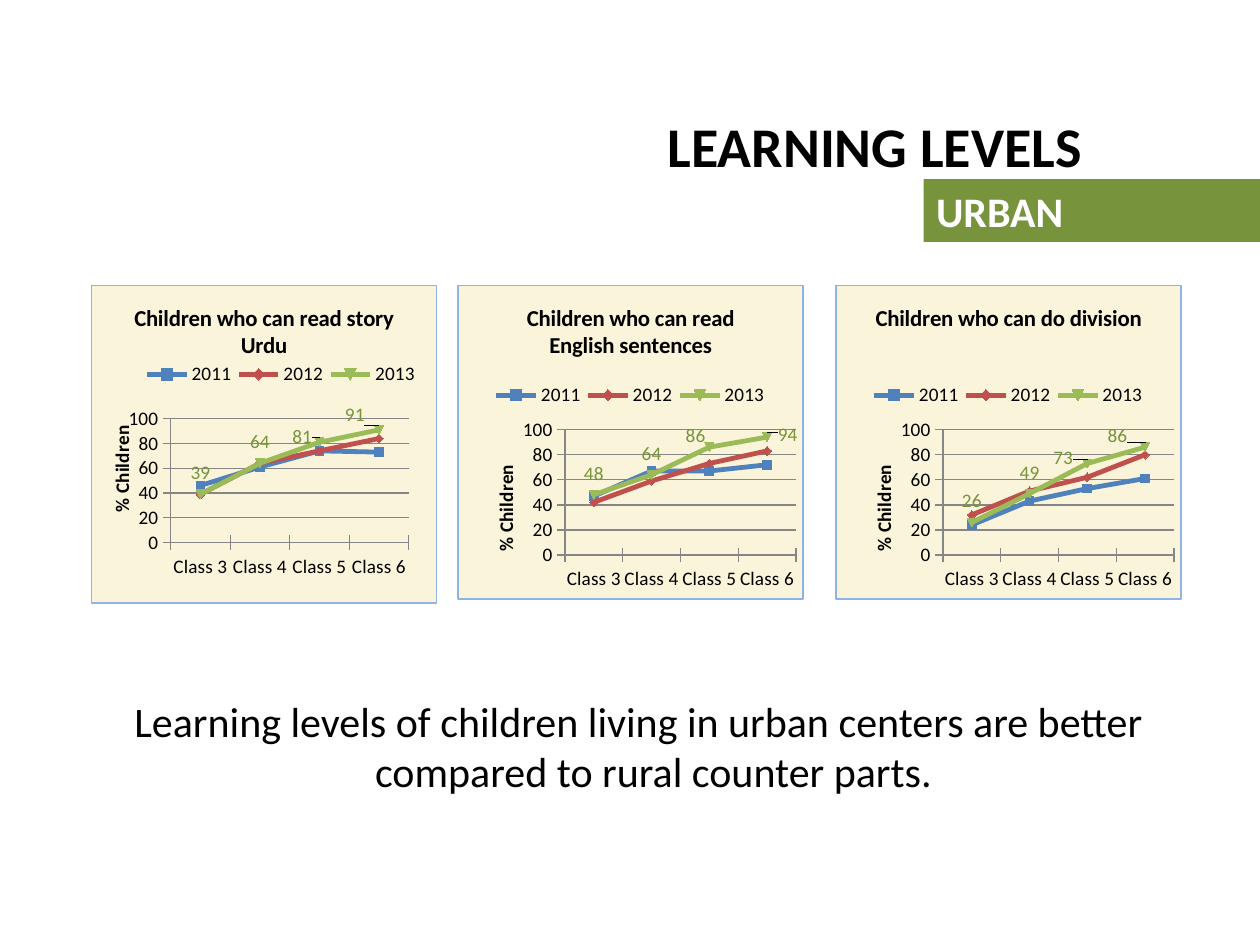
from dataclasses import dataclass

from pptx import Presentation
from pptx.chart.data import CategoryChartData
from pptx.dml.color import RGBColor
from pptx.enum.chart import XL_CHART_TYPE, XL_LABEL_POSITION, XL_LEGEND_POSITION, XL_TICK_MARK
from pptx.enum.shapes import MSO_SHAPE
from pptx.enum.text import MSO_ANCHOR, PP_ALIGN
from pptx.oxml import parse_xml
from pptx.oxml.ns import nsdecls, qn
from pptx.util import Cm, Pt


@dataclass(frozen=True)
class Theme:
    font: str = "Calibri"
    text: str = "000000"
    light: str = "FFFFFF"
    accent: str = "77933C"
    panel: str = "FAF4DA"
    border: str = "8EB4E3"
    grid: str = "868686"
    series: tuple = ("4F81BD", "C0504D", "9BBB59")
    heading_size: float = 32
    body_size: float = 24
    chart_title_size: float = 13
    chart_size: float = 11


THEME = Theme()
CLASSES = ["Class 3", "Class 4", "Class 5", "Class 6"]
YEARS = ["2011", "2012", "2013"]
WIDE_LAYOUT = {
    "plot": (0.31, 0.46, 0.67, 0.4),
    "axis_title": (0.09, 0.56),
    "legend": (0.09, 0.31, 0.82, 0.08),
}
CHARTS = [
    {
        "title": "Children who can read story Urdu",
        "box": (1.83, 5.74, 6.98, 6.43),
        "values": [(46, 61, 74, 73), (39, 64, 74, 84), (39, 64, 81, 91)],
        "label_shifts": {2: (-0.05, 0.05), 3: (-0.07, 0.02)},
        "plot": (0.23, 0.42, 0.69, 0.39),
        "axis_title": (0.04, 0.43),
        "legend": (0.14, 0.24, 0.82, 0.08),
    },
    {
        "title": "Children who can read English sentences",
        "box": (9.22, 5.74, 6.98, 6.35),
        "values": [(47, 67, 67, 72), (42, 59, 73, 83), (48, 64, 86, 94)],
        "label_shifts": {2: (-0.04, 0.03), 3: (0.06, 0.06)},
        **WIDE_LAYOUT,
    },
    {
        "title": "Children who can do division",
        "box": (16.84, 5.74, 6.98, 6.35),
        "values": [(24, 43, 53, 61), (32, 51, 62, 80), (26, 49, 73, 86)],
        "label_shifts": {2: (-0.07, 0.05), 3: (-0.08, 0.03)},
        **WIDE_LAYOUT,
    },
]


def apply(obj, **fmt):
    for name, value in fmt.items():
        setattr(obj, name, value)


def set_font(font, size, color, bold=False):
    apply(font, name=THEME.font, size=Pt(size), bold=bold)
    font.color.rgb = RGBColor.from_string(color)


def write(tf, text, size, color, bold=False, **fmt):
    p = tf.paragraphs[0]
    apply(p, **fmt)
    r = p.add_run()
    r.text = text
    set_font(r.font, size, color, bold)
    return p


def add_text(s, box, text, size, bold=False, anchor=MSO_ANCHOR.TOP):
    tf = s.shapes.add_textbox(*map(Cm, box)).text_frame
    apply(tf, word_wrap=True, vertical_anchor=anchor)
    return write(tf, text, size, THEME.text, bold, alignment=PP_ALIGN.CENTER)


def add_banner(s, box, text):
    sp = s.shapes.add_shape(MSO_SHAPE.RECTANGLE, *map(Cm, box))
    sp.shadow.inherit = False
    sp.fill.solid()
    sp.fill.fore_color.rgb = RGBColor.from_string(THEME.accent)
    sp.line.fill.background()
    write(sp.text_frame, text, THEME.body_size, THEME.light, True, alignment=PP_ALIGN.LEFT)


def place(element, index, position, mode="edge"):
    for old in element.findall(qn("c:layout")):
        element.remove(old)
    parts = ['<c:layoutTarget val="inner"/>'] if element.tag == qn("c:plotArea") else []
    if mode == "edge":
        parts += ['<c:xMode val="edge"/>', '<c:yMode val="edge"/>']
    parts += [f'<c:{key} val="{value}"/>' for key, value in zip("xywh", position)]
    element.insert(index, parse_xml(
        f'<c:layout {nsdecls("c")}><c:manualLayout>{"".join(parts)}</c:manualLayout></c:layout>'))


def paint_chart_area(chart):
    chart._chartSpace.find(qn("c:chart")).addnext(parse_xml(
        f'<c:spPr {nsdecls("c", "a")}>'
        f'<a:solidFill><a:srgbClr val="{THEME.panel}"/></a:solidFill>'
        f'<a:ln w="9525"><a:solidFill><a:srgbClr val="{THEME.border}"/></a:solidFill></a:ln>'
        '</c:spPr>'))


def style_axes(chart, title_position):
    value_axis, category_axis = chart.value_axis, chart.category_axis
    apply(value_axis, minimum_scale=0, maximum_scale=100, major_unit=20, has_major_gridlines=True)
    lines = [value_axis.major_gridlines.format.line]
    for axis in (value_axis, category_axis):
        axis.major_tick_mark = XL_TICK_MARK.CROSS
        lines.append(axis.format.line)
    for line in lines:
        line.color.rgb = RGBColor.from_string(THEME.grid)
        line.width = Pt(0.75)
    title = value_axis.axis_title
    write(title.text_frame, "% Children", THEME.chart_size, THEME.text, True)
    place(title._element, 1, title_position)


def style_series(chart):
    for series, color in zip(chart.plots[0].series, THEME.series):
        rgb = RGBColor.from_string(color)
        series.smooth = False
        series.format.line.width = Pt(2.75)
        series.format.line.color.rgb = rgb
        series.marker.format.fill.solid()
        series.marker.format.fill.fore_color.rgb = rgb
        series.marker.format.line.color.rgb = rgb


def label_series(series, shifts):
    labels = series.data_labels
    apply(labels, show_value=True, position=XL_LABEL_POSITION.ABOVE)
    set_font(labels.font, THEME.chart_size, THEME.accent)
    for index, shift in shifts.items():
        label = series.points[index].data_label
        label.position = XL_LABEL_POSITION.ABOVE
        set_font(label.font, THEME.chart_size, THEME.accent)
        d_lbl = series._element.xpath(f'.//c:dLbl[c:idx/@val="{index}"]')[0]
        place(d_lbl, 1, shift, "factor")


def add_line_chart(s, spec_):
    data = CategoryChartData()
    data.categories = CLASSES
    for year, values in zip(YEARS, spec_["values"]):
        data.add_series(year, values)
    chart = s.shapes.add_chart(XL_CHART_TYPE.LINE_MARKERS, *map(Cm, spec_["box"]), data).chart
    set_font(chart.font, THEME.chart_size, THEME.text)
    apply(chart, has_title=True, has_legend=True)
    write(chart.chart_title.text_frame, spec_["title"], THEME.chart_title_size, THEME.text, True)
    apply(chart.legend, position=XL_LEGEND_POSITION.TOP, include_in_layout=False)
    place(chart.legend._element, 1, spec_["legend"])
    place(chart._chartSpace.find(".//" + qn("c:plotArea")), 0, spec_["plot"])
    chart.plots[0].vary_by_categories = False
    paint_chart_area(chart)
    style_axes(chart, spec_["axis_title"])
    style_series(chart)
    label_series(chart.plots[0].series[-1], spec_["label_shifts"])


def main():
    prs = Presentation()
    apply(prs, slide_width=Cm(25.4), slide_height=Cm(19.05))
    s = prs.slides.add_slide(prs.slide_layouts[6])
    p = add_text(s, (1.27, 13.89, 22.86, 3.81),
                 "Learning levels of children living in urban centers are better "
                 "compared to rural counter parts.", THEME.body_size)
    for name, value in {"marL": Cm(0.95), "indent": Cm(-0.6)}.items():
        p._p.get_or_add_pPr().set(name, str(value))
    add_banner(s, (18.62, 3.61, 6.78, 1.27), "URBAN")
    add_text(s, (12.9, 1.73, 9.73, 2.41), "LEARNING LEVELS ", THEME.heading_size, True,
             MSO_ANCHOR.MIDDLE)
    for chart in CHARTS:
        add_line_chart(s, chart)
    prs.save("out.pptx")


if __name__ == "__main__":
    main()
